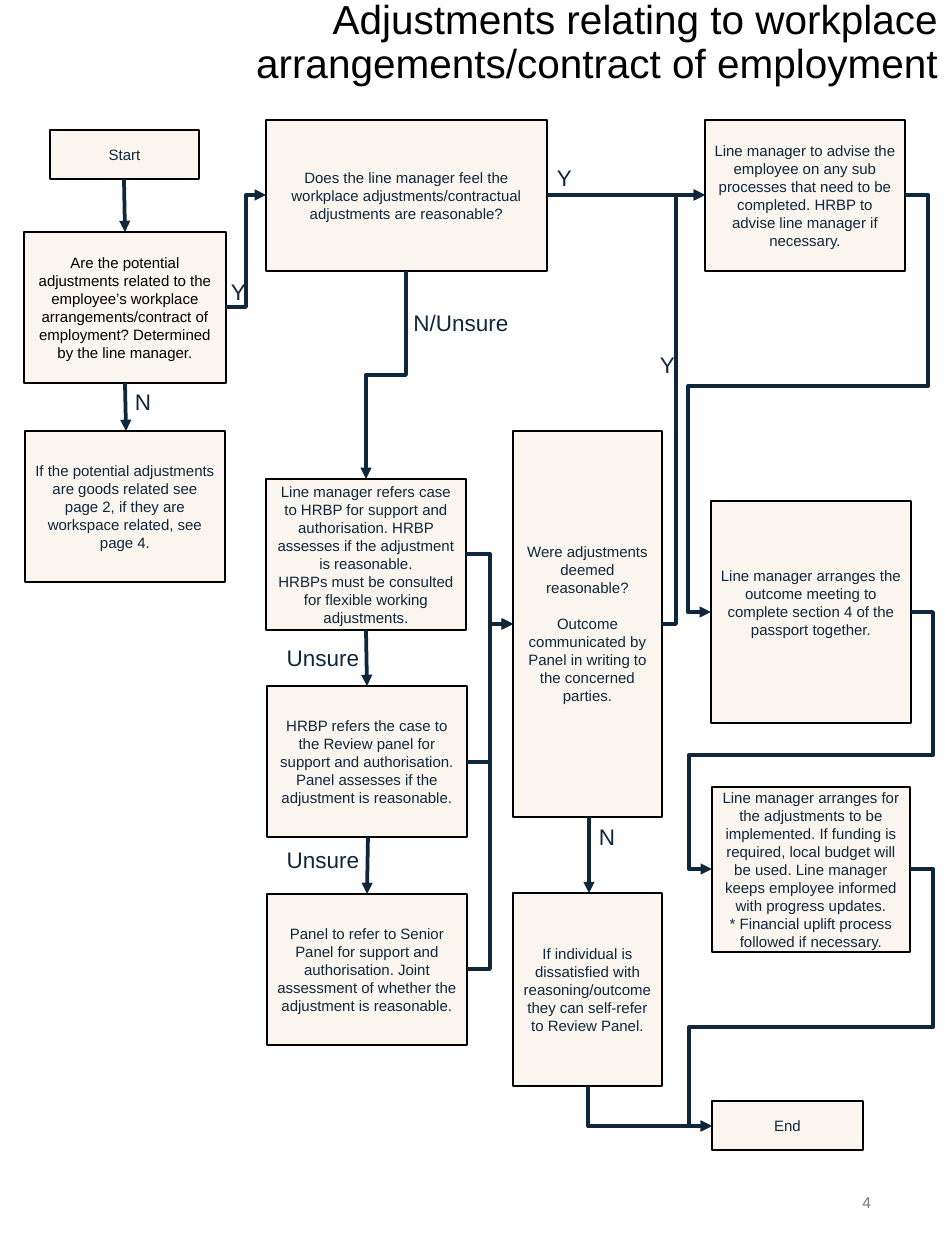
"""Build the workplace adjustments flowchart slide."""
from dataclasses import dataclass
from typing import Any, Optional

from lxml import etree
from pptx import Presentation
from pptx import util as u
from pptx.dml.color import RGBColor
from pptx.enum import shapes, text
from pptx.oxml.ns import qn

PX = 10160


@dataclass(frozen=True)
class Theme:
    font: str = "Arial"
    fill: str = "FAF6EF"
    border: str = "000000"
    ink: str = "10263B"
    black: str = "000000"
    grey: str = "797979"
    body: float = 12
    label: float = 18
    title: float = 32.4
    number: float = 12.6
    border_width: float = 1.5
    link_width: float = 3


@dataclass(frozen=True)
class Rect:
    x: int
    y: int
    w: int
    h: int


@dataclass(frozen=True)
class Box:
    rect: Rect
    lines: tuple[str, ...]
    color: str = Theme.ink
    gap: int = 0
    raise_by: int = 0


@dataclass(frozen=True)
class Label:
    rect: Rect
    words: str


@dataclass(frozen=True)
class Link:
    begin: tuple[int, int]
    end: tuple[int, int]
    bends: Optional[tuple[int, ...]] = None
    vertical: bool = False


T = Theme()
A = text.PP_ALIGN
M = text.MSO_ANCHOR

BOXES = (
    Box(Rect(50, 130, 149, 49), ("Start",)),
    Box(Rect(24, 232, 202, 151), (
        "Are the potential adjustments related to the employee’s workplace "
        "arrangements/contract of employment? Determined by the line manager.",), T.black),
    Box(Rect(25, 431, 200, 151), (
        "If the potential adjustments are goods related see page 2, "
        "if they are workspace related, see page 4.",)),
    Box(Rect(266, 120, 281, 151), (
        "Does the line manager feel the workplace adjustments/contractual "
        "adjustments are reasonable?",)),
    Box(Rect(266, 479, 200, 151), (
        "Line manager refers case to HRBP for support and authorisation. "
        "HRBP assesses if the adjustment is reasonable.",
        "HRBPs must be consulted for flexible working adjustments.")),
    Box(Rect(267, 686, 200, 151), (
        "HRBP refers the case to the Review panel for support and authorisation. "
        "Panel assesses if the adjustment is reasonable.",)),
    Box(Rect(267, 894, 200, 151), (
        "Panel to refer to Senior Panel for support and authorisation. "
        "Joint assessment of whether the adjustment is reasonable.",)),
    Box(Rect(513, 431, 149, 386), (
        "Were adjustments deemed reasonable?",
        "Outcome communicated by Panel in writing to the concerned parties."), gap=18),
    Box(Rect(513, 893, 149, 193), (
        "If individual is dissatisfied with reasoning/outcome "
        "they can self-refer to Review Panel.",)),
    Box(Rect(705, 120, 200, 151), (
        "Line manager to advise the employee on any sub processes that need to be "
        "completed. HRBP to advise line manager if necessary.",)),
    Box(Rect(711, 501, 200, 222), (
        "Line manager arranges the outcome meeting to complete section 4 "
        "of the passport together.",), raise_by=18),
    Box(Rect(712, 787, 198, 165), (
        "Line manager arranges for the adjustments to be implemented. If funding is "
        "required, local budget will be used. Line manager keeps employee informed "
        "with progress updates.",
        "* Financial uplift process followed if necessary.")),
    Box(Rect(712, 1101, 151, 49), ("End",)),
)

LINKS = (
    Link((124, 179), (125, 232)),
    Link((125, 383), (126, 431)),
    Link((366, 630), (367, 686)),
    Link((368, 837), (367, 894)),
    Link((547, 195), (705, 195)),
    Link((226, 307), (266, 195), (246,)),
    Link((466, 554), (513, 624), (490,)),
    Link((467, 762), (513, 624), (490,)),
    Link((467, 969), (513, 624), (490,)),
    Link((662, 624), (705, 195), (676,)),
    Link((905, 195), (711, 612), (928, 386, 688)),
    Link((911, 612), (712, 869), (933, 755, 689)),
    Link((910, 869), (712, 1126), (933, 1027, 689)),
    Link((406, 271), (366, 479), (375,), True),
    Link((589, 817), (589, 893), (855,), True),
    Link((588, 1086), (712, 1126), (), True),
)

LABELS = (
    Label(Rect(548, 160, 26, 36), "Y"),
    Label(Rect(222, 274, 26, 36), "Y"),
    Label(Rect(651, 347, 26, 36), "Y"),
    Label(Rect(126, 384, 26, 36), "N"),
    Label(Rect(590, 819, 26, 36), "N"),
    Label(Rect(271, 640, 104, 36), "Unsure"),
    Label(Rect(271, 842, 104, 36), "Unsure"),
    Label(Rect(380, 305, 162, 36), "N/Unsure"),
)


def apply(obj: Any, values: dict[str, Any]) -> None:
    """Set every named attribute on the object."""
    for name, value in values.items():
        setattr(obj, name, value)


def emu(r: Rect) -> tuple[int, ...]:
    """Turn a pixel rectangle into EMU."""
    return tuple(v * PX for v in (r.x, r.y, r.w, r.h))


def write(tf: Any, lines: tuple[str, ...], size: float, color: str,
          para: dict[str, Any], gap: int = 0) -> None:
    """Fill a text frame with formatted paragraphs."""
    tf.word_wrap = True
    for i, line in enumerate(lines):
        p = tf.add_paragraph() if i else tf.paragraphs[0]
        apply(p, para)
        if i and gap:
            p.space_before = u.Emu(gap * PX)
        r = p.add_run()
        r.text = line
        apply(r.font, {"name": T.font, "size": u.Pt(size)})
        r.font.color.rgb = RGBColor.from_string(color)


def draw_box(s: Any, box: Box) -> None:
    """Draw one process box."""
    sp = s.shapes.add_shape(shapes.MSO_SHAPE.RECTANGLE, *emu(box.rect))
    sp.shadow.inherit = False
    sp.fill.solid()
    sp.fill.fore_color.rgb = RGBColor.from_string(T.fill)
    sp.line.color.rgb = RGBColor.from_string(T.border)
    sp.line.width = u.Pt(T.border_width)
    tf = sp.text_frame
    apply(tf, {"vertical_anchor": M.MIDDLE,
               "margin_bottom": u.Inches(0.05) + box.raise_by * PX})
    write(tf, box.lines, T.body, box.color, {"alignment": A.CENTER}, box.gap)


def draw_text(s: Any, rect: Rect, words: str, size: float, color: str,
              frame: dict[str, Any], para: dict[str, Any]) -> None:
    """Draw one free-standing text box."""
    tf = s.shapes.add_textbox(*emu(rect)).text_frame
    apply(tf, frame)
    write(tf, (words,), size, color, para)


def draw_link(s: Any, link: Link) -> None:
    """Draw a straight or elbow arrow through its bends."""
    (bx, by), (ex, ey) = link.begin, link.end
    kinds = shapes.MSO_CONNECTOR
    kind = kinds.STRAIGHT if link.bends is None else kinds.ELBOW
    ends, rot = (bx, by, ex, ey), 0
    if link.vertical:
        cx, cy, w, h = (bx + ex) / 2, (by + ey) / 2, ey - by, abs(ex - bx)
        side, rot = (-1, 270) if ex > bx else (1, 90)
        ends = (cx - side * w / 2, cy - h / 2, cx + side * w / 2, cy + h / 2)
    c = s.shapes.add_connector(kind, *(int(v * PX) for v in ends))
    c.line.color.rgb = RGBColor.from_string(T.ink)
    c.line.width = u.Pt(T.link_width)
    pr = c._element.spPr
    etree.SubElement(c.line._get_or_add_ln(), qn("a:tailEnd"), type="triangle")
    etree.SubElement(pr, qn("a:effectLst"))
    if rot:
        pr.find(qn("a:xfrm")).set("rot", str(rot * 60000))
    if link.bends is not None:
        geom = pr.find(qn("a:prstGeom"))
        geom.set("prst", f"bentConnector{len(link.bends) + 2}")
        guides = geom.find(qn("a:avLst"))
        for i, bend in enumerate(link.bends):
            start, stop = (by, ey) if link.vertical ^ (i % 2 == 1) else (bx, ex)
            ratio = round((bend - start) / (stop - start) * 100000)
            etree.SubElement(guides, qn("a:gd"), name=f"adj{i + 1}" if len(link.bends) > 1
                             else "adj1", fmla=f"val {ratio}")


def main() -> None:
    """Assemble and save the slide."""
    prs = Presentation()
    apply(prs, {"slide_width": 945 * PX, "slide_height": 1260 * PX})
    s = prs.slides.add_slide(prs.slide_layouts[6])
    middle = {"vertical_anchor": M.MIDDLE}
    draw_text(s, Rect(0, 2, 947, 83),
              "Adjustments relating to workplace arrangements/contract of employment",
              T.title, T.black, middle, {"alignment": A.RIGHT, "line_spacing": 0.9})
    for box in BOXES:
        draw_box(s, box)
    for link in LINKS:
        draw_link(s, link)
    for label in LABELS:
        draw_text(s, label.rect, label.words, T.label, T.ink,
                  {"auto_size": text.MSO_AUTO_SIZE.SHAPE_TO_FIT_TEXT}, {"alignment": A.CENTER})
    draw_text(s, Rect(668, 1168, 212, 68), "4", T.number, T.grey, middle, {"alignment": A.RIGHT})
    prs.save("out.pptx")


if __name__ == "__main__":
    main()
